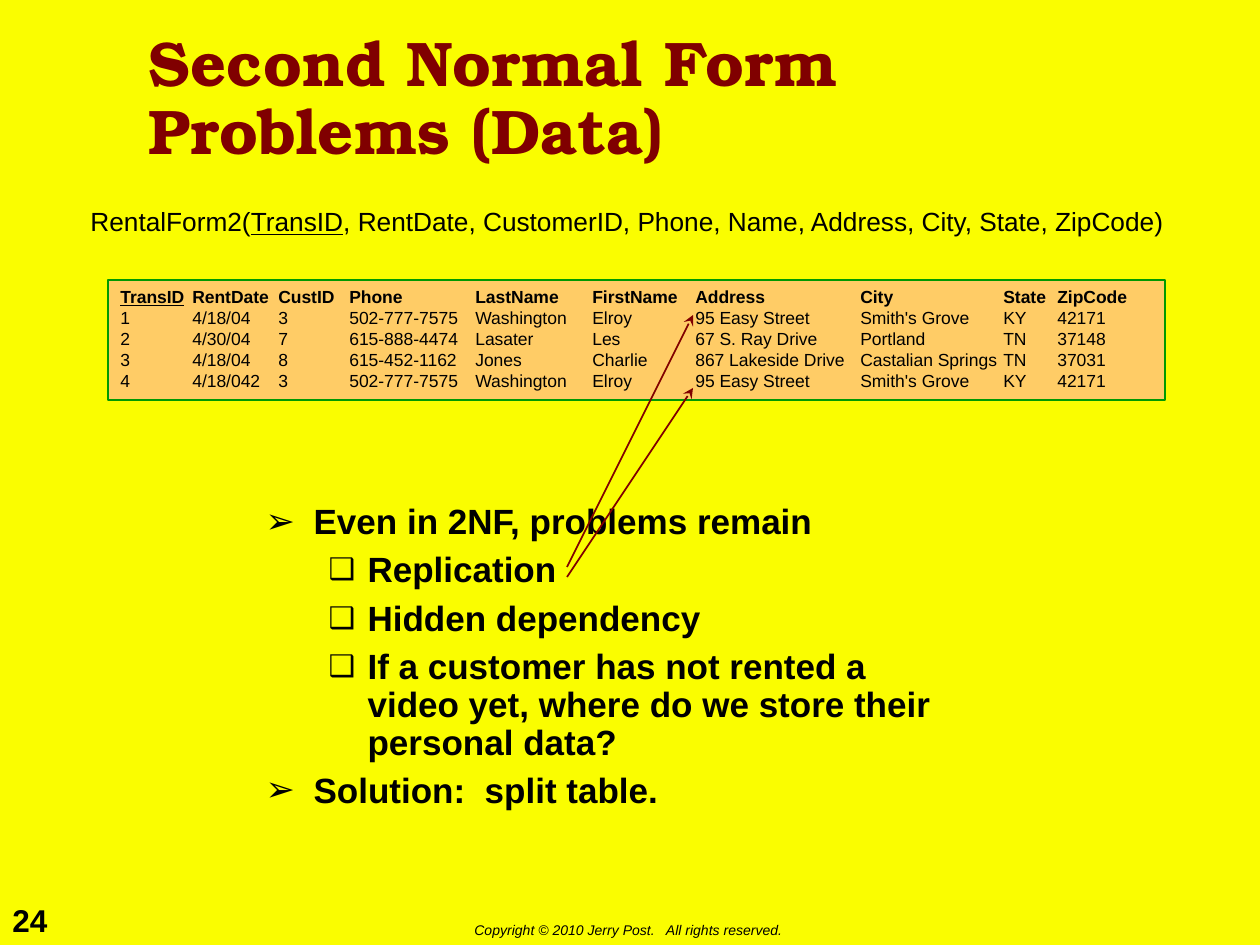
from dataclasses import dataclass

import pptx
import pptx.dml.color
import pptx.enum.shapes
import pptx.enum.text
import pptx.oxml.ns
import pptx.util
from lxml import etree

EMU_PER_PX = 914400 / 126
RGB = pptx.dml.color.RGBColor.from_string
ANCHOR = pptx.enum.text.MSO_ANCHOR
AUTO_SIZE = pptx.enum.text.MSO_AUTO_SIZE


@dataclass(frozen=True)
class Style:
    size: int
    bold: bool = False
    italic: bool = False
    color: str = "000000"
    font: str = "Arial"


@dataclass(frozen=True)
class Theme:
    background: str = "FAFD00"
    ink: str = "000000"
    accent: str = "800000"
    table_fill: str = "FFCC66"
    table_line: str = "009900"
    title: Style = Style(36, bold=True, color="800000", font="TeX Gyre Bonum")
    body: Style = Style(20, bold=True)
    schema: Style = Style(15)
    header: Style = Style(10, bold=True)
    row: Style = Style(10)
    number: Style = Style(18, bold=True)
    copyright: Style = Style(8, italic=True)


@dataclass(frozen=True)
class Box:
    left: int
    top: int
    width: int
    height: int

    def emu(self):
        return [px(v) for v in (self.left, self.top, self.width, self.height)]


@dataclass(frozen=True)
class Bullet:
    text: str
    level: int = 0


@dataclass(frozen=True)
class Arrow:
    x1: int
    y1: int
    x2: int
    y2: int


THEME = Theme()
BULLET_LOOK = [("➢", 48, 48, 100), ("❑", 102, 39, 85)]  # char, margin, hang, size %
BULLETS = [
    Bullet("Even in 2NF, problems remain"),
    Bullet("Replication", 1),
    Bullet("Hidden dependency", 1),
    Bullet("If a customer has not rented a video yet, where do we store their personal data?", 1),
    Bullet("Solution:  split table."),
]
KEY = "TransID"
COLUMNS = ["RentDate", "CustID", "Phone", "LastName", "FirstName", "Address", "City", "State", "ZipCode"]
TAB_STOPS = [72, 158, 229, 355, 472, 575, 740, 883, 937]
RENTALS = [
    ["1", "4/18/04", "3", "502-777-7575", "Washington", "Elroy", "95 Easy Street", "Smith's Grove", "KY", "42171"],
    ["2", "4/30/04", "7", "615-888-4474", "Lasater", "Les", "67 S. Ray Drive", "Portland", "TN", "37148"],
    ["3", "4/18/04", "8", "615-452-1162", "Jones", "Charlie", "867 Lakeside Drive", "Castalian Springs", "TN", "37031"],
    ["4", "4/18/042", "3", "502-777-7575", "Washington", "Elroy", "95 Easy Street", "Smith's Grove", "KY", "42171"],
]
ARROWS = [Arrow(567, 567, 693, 315), Arrow(567, 577, 693, 388)]


def px(value: int) -> int:
    return round(value * EMU_PER_PX)


def add_xml(parent, tag: str, **attrs):
    return etree.SubElement(parent, pptx.oxml.ns.qn(tag), {k: str(v) for k, v in attrs.items()})


def write(p, style: Style, *texts: str) -> None:
    """Fill a paragraph with runs, underlining the key column's name."""
    f = p.font
    f.size, f.name = pptx.util.Pt(style.size), style.font
    f.bold, f.italic = style.bold, style.italic
    f.color.rgb = RGB(style.color)
    p.alignment = pptx.enum.text.PP_ALIGN.LEFT
    for text in texts:
        r = p.add_run()
        r.text = text
        if text == KEY:
            r.font.underline = True


def place(sp, box: Box, anchor):
    sp.left, sp.top, sp.width, sp.height = box.emu()
    tf = sp.text_frame
    tf.word_wrap, tf.auto_size, tf.vertical_anchor = True, AUTO_SIZE.NONE, anchor
    return tf


def add_label(s, box: Box, style: Style, *texts: str) -> None:
    tf = s.shapes.add_textbox(*box.emu()).text_frame
    tf.word_wrap, tf.auto_size = False, AUTO_SIZE.SHAPE_TO_FIT_TEXT
    write(tf.paragraphs[0], style, *texts)


def add_title(s, box: Box, text: str) -> None:
    p = place(s.shapes.title, box, ANCHOR.MIDDLE).paragraphs[0]
    p.line_spacing = 0.9
    write(p, THEME.title, text)


def add_bullets(s, box: Box, bullets: list[Bullet]) -> None:
    tf = place(s.placeholders[1], box, ANCHOR.TOP)
    for i, bullet in enumerate(bullets):
        p = tf.add_paragraph() if i else tf.paragraphs[0]
        char, margin, hang, size = BULLET_LOOK[bullet.level]
        p.level = bullet.level
        pPr = p._p.get_or_add_pPr()
        pPr.set("marL", str(px(margin)))
        pPr.set("indent", str(-px(hang)))
        add_xml(add_xml(pPr, "a:buClr"), "a:srgbClr", val=THEME.ink)
        add_xml(pPr, "a:buSzPct", val=size * 1000)
        add_xml(pPr, "a:buChar", char=char)
        p.line_spacing = 0.9
        p.space_before = pptx.util.Pt(6 if i else 0)
        write(p, THEME.body, bullet.text)


def add_rentals(s, box: Box) -> None:
    """Draw the data panel, its columns aligned on tab stops."""
    sp = s.shapes.add_shape(pptx.enum.shapes.MSO_SHAPE.RECTANGLE, *box.emu())
    sp.shadow.inherit = False
    sp.fill.solid()
    sp.fill.fore_color.rgb = RGB(THEME.table_fill)
    sp.line.color.rgb = RGB(THEME.table_line)
    sp.line.width = pptx.util.Pt(1)
    tf = place(sp, box, ANCHOR.TOP)
    lines = [(THEME.header, [KEY, "\t" + "\t".join(COLUMNS)])]
    lines += [(THEME.row, ["\t".join(row)]) for row in RENTALS]
    for i, (style, texts) in enumerate(lines):
        p = tf.add_paragraph() if i else tf.paragraphs[0]
        tabs = add_xml(p._p.get_or_add_pPr(), "a:tabLst")
        for stop in TAB_STOPS:
            add_xml(tabs, "a:tab", pos=px(stop), algn="l")
        write(p, style, *texts)


def add_arrow(s, arrow: Arrow) -> None:
    ends = [px(v) for v in (arrow.x1, arrow.y1, arrow.x2, arrow.y2)]
    sp = s.shapes.add_connector(pptx.enum.shapes.MSO_CONNECTOR.STRAIGHT, *ends)
    sp.line.color.rgb = RGB(THEME.accent)
    sp.line.width = pptx.util.Pt(1)
    add_xml(sp.line._get_or_add_ln(), "a:tailEnd", type="stealth")
    add_xml(sp._element.spPr, "a:effectLst")


def main() -> None:
    prs = pptx.Presentation()
    prs.slide_width, prs.slide_height = px(1260), px(945)
    s = prs.slides.add_slide(prs.slide_layouts[1])
    s.background.fill.solid()
    s.background.fill.fore_color.rgb = RGB(THEME.background)

    add_label(s, Box(0, 895, 63, 50), THEME.number, "24")
    add_label(s, Box(462, 915, 338, 30), THEME.copyright,
              "Copyright © 2010 Jerry Post.   All rights reserved.")
    add_title(s, Box(136, 21, 987, 158), "Second Normal Form Problems (Data)")
    add_rentals(s, Box(108, 280, 1057, 120))
    add_label(s, Box(78, 199, 1104, 44), THEME.schema, "RentalForm2(", KEY,
              ", RentDate, CustomerID, Phone, Name, Address, City, State, ZipCode)")
    add_bullets(s, Box(253, 498, 707, 289), BULLETS)
    for arrow in ARROWS:
        add_arrow(s, arrow)
    prs.save("out.pptx")


if __name__ == "__main__":
    main()
